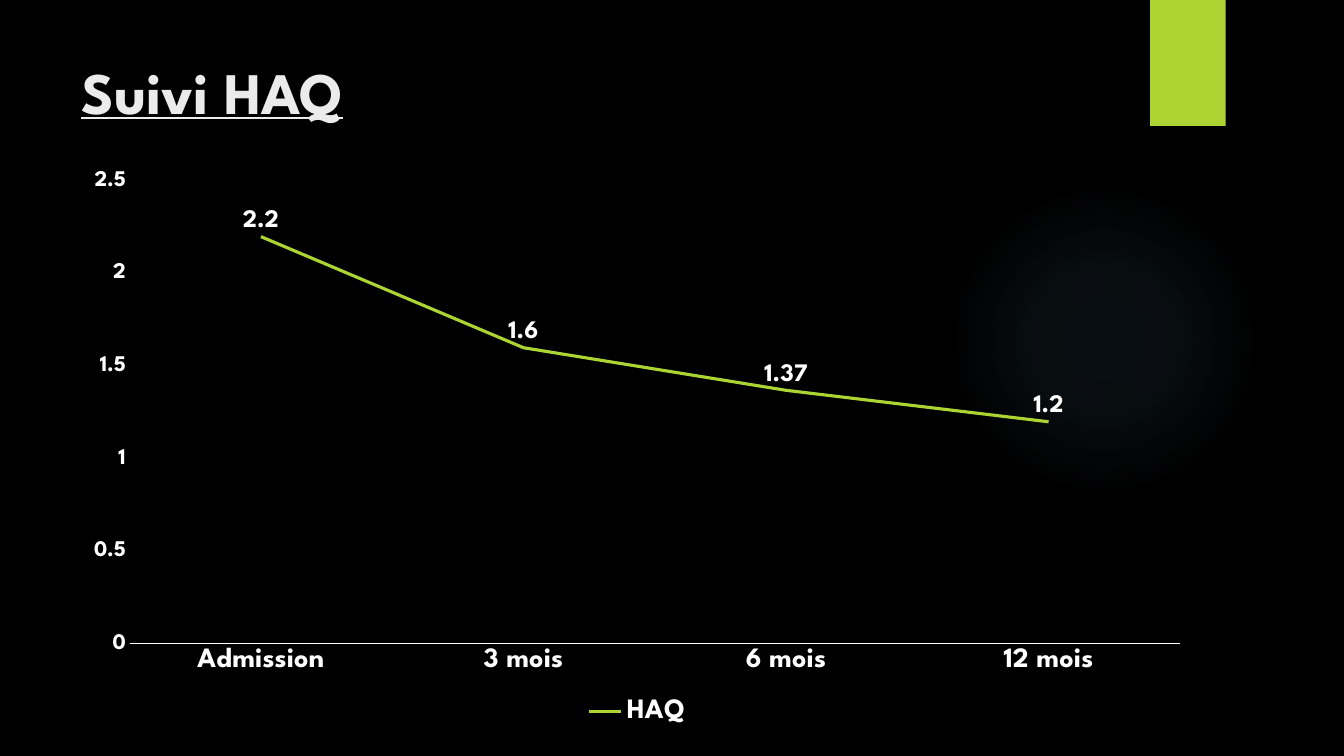
from lxml import etree
from pptx import Presentation
from pptx.chart.data import CategoryChartData
from pptx.dml.color import RGBColor
from pptx.enum.chart import XL_CHART_TYPE as ChartType, XL_LABEL_POSITION as LabelPosition
from pptx.enum.chart import XL_LEGEND_POSITION as LegendPosition, XL_MARKER_STYLE as MarkerStyle
from pptx.enum.chart import XL_TICK_MARK as TickMark
from pptx.enum.shapes import MSO_SHAPE as ShapeType
from pptx.enum.text import MSO_ANCHOR as Anchor
from pptx.oxml.ns import qn
from pptx.util import Pt

# Content
TITLE = "Suivi HAQ"
SERIES_NAME = "HAQ"
SCORES = {"Admission": 2.2, "3 mois": 1.6, "6 mois": 1.37, "12 mois": 1.2}

# Style
FONT = "League Spartan"
COLORS = {"background": "000000", "title": "EBEBEB", "text": "FFFFFF",
          "accent": "ACD433", "glow": "7AC4F0"}
GLOW_STOPS = [(0, 7), (36, 6), (69, 0)]  # position and opacity, in percent

# Left, top, width, height in points
GLOW_BOX = (677.5, 131.75, 221.75, 221.75)
TAB_BOX = (821.5, 0, 54, 90)
TITLE_BOX = (51, 36, 741, 110)
CHART_BOX = (51, 113.75, 808, 408)


def points(box):
    return [Pt(value) for value in box]


def color(name):
    return RGBColor.from_string(COLORS[name])


def style_font(font, size, color_name="text"):
    font.name = FONT
    font.size = Pt(size)
    font.bold = True
    font.color.rgb = color(color_name)


def add_plain_shape(slide, kind, box):
    shape = slide.shapes.add_shape(kind, *points(box))
    shape.shadow.inherit = False
    shape.line.fill.background()
    shape.fill.solid()
    shape.fill.fore_color.rgb = color("accent")
    return shape


def fill_with_glow(shape):
    properties = shape.fill._xPr
    solid = properties.find(qn("a:solidFill"))
    gradient = etree.Element(qn("a:gradFill"), rotWithShape="1")
    stops = etree.SubElement(gradient, qn("a:gsLst"))
    for position, opacity in GLOW_STOPS:
        stop = etree.SubElement(stops, qn("a:gs"), pos=str(position * 1000))
        tint = etree.SubElement(stop, qn("a:srgbClr"), val=COLORS["glow"])
        etree.SubElement(tint, qn("a:alpha"), val=str(opacity * 1000))
    circle = etree.SubElement(gradient, qn("a:path"), path="circle")
    etree.SubElement(circle, qn("a:fillToRect"),
                     {side: "50000" for side in "ltrb"})
    properties.replace(solid, gradient)


def add_title(slide):
    frame = slide.shapes.add_textbox(*points(TITLE_BOX)).text_frame
    frame.word_wrap = True
    frame.vertical_anchor = Anchor.TOP
    frame.text = TITLE
    font = frame.paragraphs[0].runs[0].font
    style_font(font, 42, "title")
    font.underline = True


def add_score_chart(slide):
    data = CategoryChartData()
    data.categories = list(SCORES)
    data.add_series(SERIES_NAME, list(SCORES.values()))
    chart = slide.shapes.add_chart(ChartType.LINE, *points(CHART_BOX), data).chart
    chart.has_title = False
    chart.font.name = FONT
    chart.font.size = Pt(10)
    chart.font.color.rgb = color("text")

    # Axes
    for axis, size in ((chart.category_axis, 20), (chart.value_axis, 16)):
        axis.major_tick_mark = axis.minor_tick_mark = TickMark.NONE
        axis.has_major_gridlines = False
        style_font(axis.tick_labels.font, size)
    axis_line = chart.category_axis.format.line
    axis_line.color.rgb = color("text")
    axis_line.width = Pt(0.75)
    value_axis = chart.value_axis
    value_axis.format.line.fill.background()
    value_axis.minimum_scale, value_axis.maximum_scale = 0, 2.5
    value_axis.major_unit = 0.5

    # Legend
    chart.has_legend = True
    chart.legend.position = LegendPosition.BOTTOM
    chart.legend.include_in_layout = False
    style_font(chart.legend.font, 20)

    # Line and its labels
    plot = chart.plots[0]
    plot.vary_by_categories = False
    series = plot.series[0]
    series.smooth = False
    series.marker.style = MarkerStyle.NONE
    series.format.line.color.rgb = color("accent")
    series.format.line.width = Pt(2.25)
    labels = series.data_labels
    labels.show_value = True
    labels.position = LabelPosition.ABOVE
    style_font(labels.font, 18)


def main():
    presentation = Presentation()
    presentation.slide_width, presentation.slide_height = Pt(960), Pt(540)
    slide = presentation.slides.add_slide(presentation.slide_layouts[6])
    slide.background.fill.solid()
    slide.background.fill.fore_color.rgb = color("background")

    # Decoration
    fill_with_glow(add_plain_shape(slide, ShapeType.OVAL, GLOW_BOX))
    add_plain_shape(slide, ShapeType.RECTANGLE, TAB_BOX)

    add_title(slide)
    add_score_chart(slide)
    presentation.save("out.pptx")


if __name__ == "__main__":
    main()
